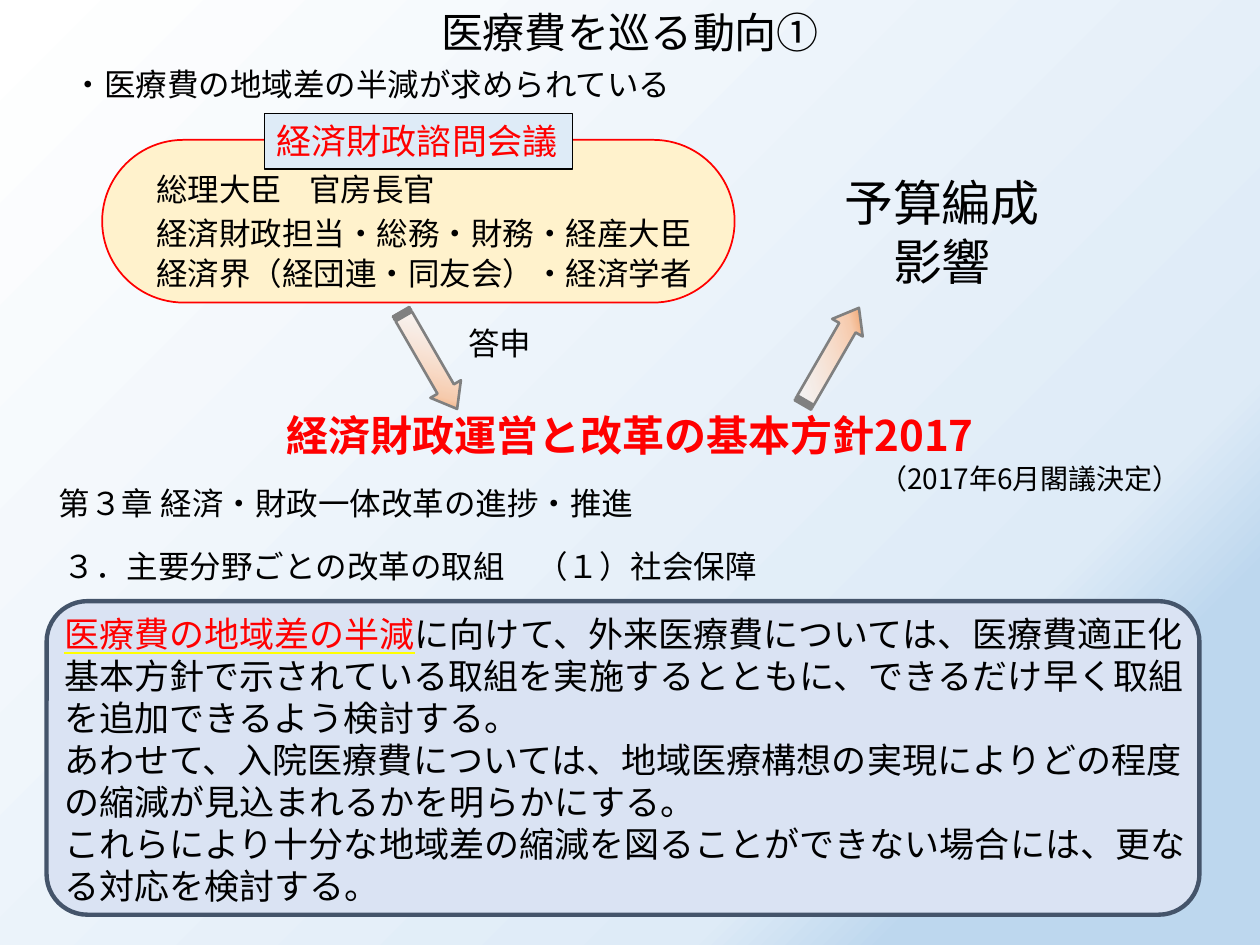
from dataclasses import dataclass

from lxml import etree
from pptx import Presentation
from pptx.dml.color import RGBColor
from pptx.enum.shapes import MSO_SHAPE
from pptx.enum.text import MSO_ANCHOR, MSO_AUTO_SIZE, PP_ALIGN
from pptx.oxml.ns import qn
from pptx.util import Cm, Pt

FONT = "Noto Sans CJK JP"
BLACK, RED = "000000", "FF0000"
LEFT, CENTER = PP_ALIGN.LEFT, PP_ALIGN.CENTER
TOP = MSO_ANCHOR.TOP
GROW = MSO_AUTO_SIZE.SHAPE_TO_FIT_TEXT
ROUNDED, RECTANGLE = MSO_SHAPE.ROUNDED_RECTANGLE, MSO_SHAPE.RECTANGLE
ARROW = MSO_SHAPE.STRIPED_RIGHT_ARROW
LINE_HEIGHT = 1.02


@dataclass
class Area:
    left: float
    top: float
    width: float
    height: float = LINE_HEIGHT

    def lengths(self) -> tuple:
        return Cm(self.left), Cm(self.top), Cm(self.width), Cm(self.height)


@dataclass
class Stop:
    position: int
    color: str
    opacity: int = 100


@dataclass
class Label:
    text: str
    area: Area
    size: int = 18
    color: str = BLACK
    bold: bool = False
    align: PP_ALIGN = LEFT
    wrap: bool = False


@dataclass
class Arrow:
    area: Area
    rotation: int


BACKGROUND = [Stop(0, "FFFFFF"), Stop(74, "DEEBF7"), Stop(83, "BDD7EE"), Stop(100, "BDD7EE")]
ARROW_FILL = [Stop(0, "FFFFFF", 50), Stop(74, "F8CBAD"), Stop(83, "F4B183"), Stop(100, "C55A11")]

LABELS = [
    Label("経済財政運営と改革の基本方針2017", Area(5.16, 8.13, 15.09, 1.27), 24, RED, True, CENTER),
    Label("・医療費の地域差の半減が求められている", Area(1.22, 1.19, 12.75), wrap=True),
    Label("（2017年6月閣議決定）", Area(17.48, 9.17, 7.34, 0.94), 16, wrap=True),
    Label("第３章 経済・財政一体改革の進捗・推進", Area(0.94, 9.63, 12.27)),
    Label("３．主要分野ごとの改革の取組　（１）社会保障", Area(1.04, 10.9, 14.94), wrap=True),
    Label("予算編成\n影響", Area(16.74, 3.35, 4.5, 2.64), 28, align=CENTER),
    Label("答申", Area(9.19, 6.4, 1.8)),
]
MEMBERS = [
    Label("総理大臣", Area(2.9, 3.3, 3.07)),
    Label("官房長官", Area(5.99, 3.3, 3.07)),
    Label("経済財政担当・総務・財務・経産大臣", Area(2.9, 4.19, 11.4)),
    Label("経済界（経団連・同友会）・経済学者", Area(2.9, 5, 11.4)),
]
ARROWS = [Arrow(Area(7.52, 6.91, 2.26, 0.71), 60), Arrow(Area(15.62, 6.83, 2.26, 0.71), 300)]
EMPHASIS = "医療費の地域差の半減"
POLICY = [
    "に向けて、外来医療費については、医療費適正化基本方針で示されている取組を実施するとともに、"
    "できるだけ早く取組を追加できるよう検討する。",
    "あわせて、入院医療費については、地域医療構想の実現によりどの程度の縮減が見込まれるかを明らかにする。",
    "これらにより十分な地域差の縮減を図ることができない場合には、更なる対応を検討する。",
]


def rgb(color: str) -> RGBColor:
    return RGBColor.from_string(color)


def add_span(paragraph, text: str, *, size: int, color: str = BLACK, bold: bool = False,
             underline: str = ""):
    span = paragraph.add_run()
    span.text = text
    font = span.font
    font.size, font.bold, font.name = Pt(size), bold, FONT
    font.color.rgb = rgb(color)
    properties = span.font._element
    latin = properties.find(qn("a:latin"))
    east_asian = etree.Element(qn("a:ea"), typeface=FONT)
    latin.addnext(east_asian)
    if underline:
        font.underline = True
        line_fill = etree.Element(qn("a:uFill"))
        solid = etree.SubElement(line_fill, qn("a:solidFill"))
        etree.SubElement(solid, qn("a:srgbClr"), val=underline)
        latin.addprevious(line_fill)
    return span


def write(frame, text: str, *, size: int = 18, color: str = BLACK, bold: bool = False,
          align: PP_ALIGN = LEFT, wrap: bool = False):
    frame.word_wrap = wrap
    frame.auto_size = GROW
    frame.vertical_anchor = TOP
    for index, line in enumerate(text.split("\n")):
        paragraph = frame.add_paragraph() if index else frame.paragraphs[0]
        paragraph.alignment = align
        add_span(paragraph, line, size=size, color=color, bold=bold)


def place(shape, area: Area):
    shape.left, shape.top, shape.width, shape.height = area.lengths()


def add_label(page, label: Label):
    box = page.shapes.add_textbox(*label.area.lengths())
    write(box.text_frame, label.text, size=label.size, color=label.color,
          bold=label.bold, align=label.align, wrap=label.wrap)


def paint_gradient(fill, element, stops: list[Stop]):
    fill.gradient()
    fill.gradient_angle = 315
    stop_list = element.find(".//" + qn("a:gsLst"))
    for old in list(stop_list):
        stop_list.remove(old)
    for stop in stops:
        node = etree.SubElement(stop_list, qn("a:gs"), pos=str(stop.position * 1000))
        color = etree.SubElement(node, qn("a:srgbClr"), val=stop.color)
        if stop.opacity < 100:
            etree.SubElement(color, qn("a:alpha"), val=str(stop.opacity * 1000))


def add_block(page, kind: MSO_SHAPE, area: Area, line: str, weight: float,
              fill: str = "", adjustments: tuple = ()):
    block = page.shapes.add_shape(kind, *area.lengths())
    block.shadow.inherit = False
    block.line.color.rgb = rgb(line)
    block.line.width = Pt(weight)
    if fill:
        block.fill.solid()
        block.fill.fore_color.rgb = rgb(fill)
    for index, value in enumerate(adjustments):
        block.adjustments[index] = value
    return block


def add_arrow(page, arrow: Arrow):
    block = add_block(page, ARROW, arrow.area, "808080", 1.5, adjustments=(0.54, 0.65))
    block.rotation = arrow.rotation
    paint_gradient(block.fill, block.element, ARROW_FILL)


def fill_policy(body):
    place(body, Area(1.04, 12.22, 23.24, 6.25))
    frame = body.text_frame
    frame.word_wrap = True
    frame.auto_size = GROW
    frame.vertical_anchor = TOP
    for index, text in enumerate(POLICY):
        paragraph = frame.add_paragraph() if index else frame.paragraphs[0]
        paragraph.space_before = Pt(0)
        properties = paragraph._p.get_or_add_pPr()
        properties.set("marL", "0")
        properties.set("indent", "0")
        etree.SubElement(properties, qn("a:buNone"))
        if index == 0:
            add_span(paragraph, EMPHASIS, size=20, color=RED, underline="FFFF00")
        add_span(paragraph, text, size=20)


def main():
    deck = Presentation()
    deck.slide_width, deck.slide_height = Cm(25.4), Cm(19.05)
    page = deck.slides.add_slide(deck.slide_layouts[1])
    paint_gradient(page.background.fill, page.element, BACKGROUND)

    title, body = page.placeholders
    place(title, Area(0, 0, 25.4, 1.27))
    write(title.text_frame, "医療費を巡る動向①", size=24, align=CENTER, wrap=True)
    panel = add_block(page, ROUNDED, Area(0.94, 12.12, 23.24, 6.32), "44546A", 2.5,
                      "DAE3F3", (0.13,))
    body.element.addprevious(panel.element)
    fill_policy(body)

    for label in LABELS:
        add_label(page, label)
    for arrow in ARROWS:
        add_arrow(page, arrow)

    add_block(page, ROUNDED, Area(2.06, 2.82, 12.75, 3.28), RED, 1, "FFF2CC", (0.5,))
    council = add_block(page, RECTANGLE, Area(5.33, 2.29, 6.22, 1.12), BLACK, 0.75, "DEEBF7")
    write(council.text_frame, "経済財政諮問会議", size=20, color=RED)
    for member in MEMBERS:
        add_label(page, member)
    deck.save("out.pptx")


if __name__ == "__main__":
    main()
